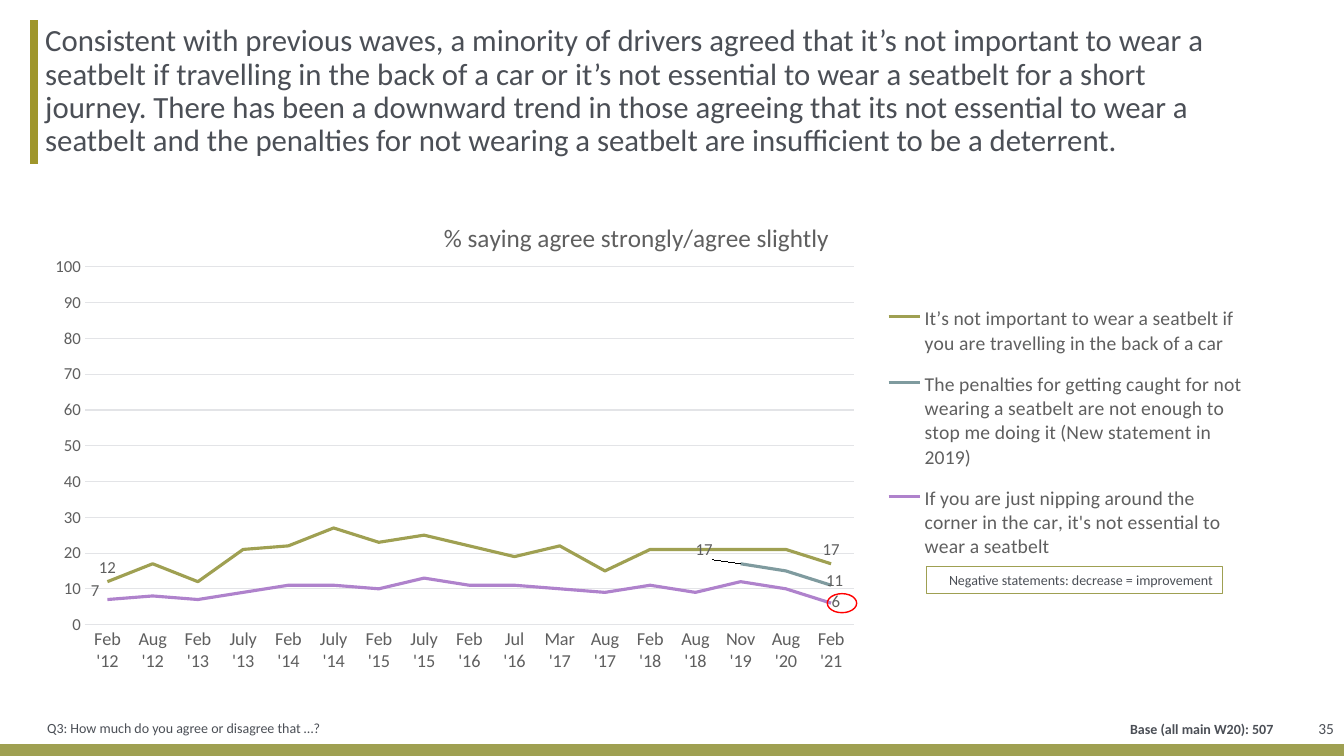
import dataclasses

import pptx
import pptx.chart.data
import pptx.dml.color
import pptx.enum.chart
import pptx.enum.shapes
import pptx.enum.text
import pptx.oxml
import pptx.oxml.ns
import pptx.util

Cm = pptx.util.Cm
Pt = pptx.util.Pt
ALIGN = pptx.enum.text.PP_ALIGN
ANCHOR = pptx.enum.text.MSO_ANCHOR
SHAPE = pptx.enum.shapes.MSO_SHAPE
LABEL = pptx.enum.chart.XL_LABEL_POSITION


@dataclasses.dataclass(frozen=True)
class Theme:
    font: str = "Calibri"
    text: str = "4B4F56"
    chart_text: str = "5F5F5F"
    grid: str = "E3E4E7"
    olive: str = "9FA052"
    accent: str = "9F962B"
    teal: str = "7F9B9F"
    purple: str = "AF82CC"
    alert: str = "FF0000"
    title: int = 22
    chart_title: int = 18
    legend: int = 14
    category: int = 13
    value: int = 12
    number: int = 11
    note: int = 10


THEME = Theme()

WAVES = ["Feb '12", "Aug '12", "Feb '13", "July '13", "Feb '14", "July '14",
         "Feb '15", "July '15", "Feb '16", "Jul '16", "Mar '17", "Aug '17",
         "Feb '18", "Aug '18", "Nov '19", "Aug '20", "Feb '21"]

# Each statement: name, colour, values, labelled points with their offsets
STATEMENTS = [
    ("It’s not important to wear a seatbelt if you are travelling in the back of a car",
     THEME.olive,
     [12, 17, 12, 21, 22, 27, 23, 25, 22, 19, 22, 15, 21, 21, 21, 21, 17],
     {0: None, 16: None}),
    ("The penalties for getting caught for not wearing a seatbelt are not enough "
     "to stop me doing it (New statement in 2019)",
     THEME.teal,
     [None] * 14 + [17, 15, 11],
     {14: (-0.03, 0), 16: (0.003, 0.02)}),
    ("If you are just nipping around the corner in the car, it's not essential "
     "to wear a seatbelt",
     THEME.purple,
     [7, 8, 7, 9, 11, 11, 10, 13, 11, 11, 10, 9, 11, 9, 12, 10, 6],
     {0: (-0.01, 0.01), 16: (0.004, 0.026)}),
]


def rgb(code):
    return pptx.dml.color.RGBColor.from_string(code)


def apply(target, values):
    for name, value in values.items():
        setattr(target, name, value)


def style_font(font, size, color=THEME.chart_text, bold=False):
    apply(font, {"name": THEME.font, "size": Pt(size), "bold": bold})
    font.color.rgb = rgb(color)


def write(shape, text, size, align=ALIGN.LEFT, anchor=ANCHOR.TOP, bold=False, **frame_values):
    frame = shape.text_frame
    apply(frame, {"word_wrap": True, "vertical_anchor": anchor, **frame_values})
    para = frame.paragraphs[0]
    para.alignment = align
    span = para.add_run()
    span.text = text
    style_font(span.font, size, THEME.text, bold)
    return para


def add_note(page, box, text, size, **values):
    shape = page.shapes.add_textbox(*map(Cm, box))
    write(shape, text, size, **values)


def add_outline(page, kind, box, color, width):
    shape = page.shapes.add_shape(kind, *map(Cm, box))
    shape.shadow.inherit = False
    shape.fill.background()
    shape.line.color.rgb = rgb(color)
    shape.line.width = Pt(width)
    return shape


def set_layout(parent, before, values, inner=False):
    """Give a chart part a manual layout, after the child named by before."""
    for old in parent.findall(pptx.oxml.ns.qn("c:layout")):
        parent.remove(old)
    target = '<c:layoutTarget val="inner"/>' if inner else ""
    modes = ""
    if len(values) == 4 or parent.tag.endswith("}title"):
        modes = '<c:xMode val="edge"/><c:yMode val="edge"/>'
    sizes = "".join(f'<c:{name} val="{value}"/>' for name, value in zip("xywh", values))
    layout = pptx.oxml.parse_xml(
        f'<c:layout {pptx.oxml.ns.nsdecls("c")}><c:manualLayout>'
        f'{target}{modes}{sizes}</c:manualLayout></c:layout>')
    if before:
        parent.find(pptx.oxml.ns.qn(before)).addnext(layout)
    else:
        parent.insert(0, layout)


def add_heading(page, box):
    left, top, width, height = box
    title = page.shapes.title
    apply(title, dict(zip(("left", "top", "width", "height"), map(Cm, box))))
    para = write(
        title,
        "Consistent with previous waves, a minority of drivers agreed that it’s not "
        "important to wear a seatbelt if travelling in the back of a car or it’s not "
        "essential to wear a seatbelt for a short journey. There has been a downward "
        "trend in those agreeing that its not essential to wear a seatbelt and the "
        "penalties for not wearing a seatbelt are insufficient to be a deterrent.",
        THEME.title, anchor=ANCHOR.MIDDLE, auto_size=pptx.enum.text.MSO_AUTO_SIZE.NONE,
        margin_left=Cm(0.2), margin_top=0, margin_right=0, margin_bottom=0)
    apply(para, {"line_spacing": 0.9, "space_before": Pt(0)})

    # Accent rule on the left edge
    rule = page.shapes.add_connector(pptx.enum.shapes.MSO_CONNECTOR.STRAIGHT,
                                     Cm(left - 0.08), Cm(top), Cm(left - 0.08), Cm(top + height))
    rule.line.color.rgb = rgb(THEME.accent)
    rule.line.width = Pt(6)
    rule._element.spPr.append(
        pptx.oxml.parse_xml(f'<a:effectLst {pptx.oxml.ns.nsdecls("a")}/>'))


def style_axes(chart):
    tick_none = pptx.enum.chart.XL_TICK_MARK.NONE
    for axis, size in ((chart.category_axis, THEME.category), (chart.value_axis, THEME.value)):
        apply(axis, {"major_tick_mark": tick_none, "minor_tick_mark": tick_none})
        style_font(axis.tick_labels.font, size)
    values = chart.value_axis
    apply(values, {"minimum_scale": 0, "maximum_scale": 100, "major_unit": 10,
                   "has_major_gridlines": True})
    values.format.line.fill.background()
    for line in (values.major_gridlines.format.line, chart.category_axis.format.line):
        line.color.rgb = rgb(THEME.grid)
        line.width = Pt(0.75)


def style_series(series, color, labelled):
    series.smooth = False
    series.marker.style = pptx.enum.chart.XL_MARKER_STYLE.NONE
    series.format.line.color.rgb = rgb(color)
    series.format.line.width = Pt(2.25)
    series.data_labels.show_value = False
    for index, offset in labelled.items():
        label = series.points[index].data_label
        style_font(label.font, THEME.value)
        label.position = LABEL.ABOVE
        if offset:
            set_layout(label._dLbl, "c:idx", offset)


def add_trend_chart(page, box):
    left, top, width, height = box
    data = pptx.chart.data.CategoryChartData()
    data.categories = WAVES
    for name, color, values, labelled in STATEMENTS:
        data.add_series(name, values)
    chart = page.shapes.add_chart(
        pptx.enum.chart.XL_CHART_TYPE.LINE, *map(Cm, box), data).chart
    style_font(chart.font, THEME.note)
    chart.plots[0].vary_by_categories = False
    style_axes(chart)
    for series, (name, color, values, labelled) in zip(chart.plots[0].series, STATEMENTS):
        style_series(series, color, labelled)

    # Title, legend and plot area
    chart.has_title = True
    span = chart.chart_title.text_frame.paragraphs[0].add_run()
    span.text = "% saying agree strongly/agree slightly"
    style_font(span.font, THEME.chart_title)
    chart.has_legend = True
    apply(chart.legend, {"position": pptx.enum.chart.XL_LEGEND_POSITION.RIGHT,
                         "include_in_layout": False})
    style_font(chart.legend.font, THEME.legend)
    set_layout(chart.chart_title._element, "c:tx", (0.33, 0.04))
    set_layout(chart.legend._element, "c:legendPos", (0.71, 0.19, 0.29, 0.58))
    set_layout(chart._chartSpace.chart.plotArea, None, (0.039, 0.144, 0.631, 0.723), inner=True)

    # Reading hint under the legend and ring round the latest value
    hint = add_outline(page, SHAPE.RECTANGLE, (left + 22.4, top + 9.34, 7.47, 0.69),
                       THEME.olive, 0.75)
    write(hint, "Negative statements: decrease = improvement", THEME.note, align=ALIGN.RIGHT)
    add_outline(page, SHAPE.OVAL, (left + 19.91, top + 10.03, 0.74, 0.48), THEME.alert, 1)


def add_footer(page, box):
    left, top, width, height = box
    band = page.shapes.add_shape(SHAPE.RECTANGLE, *map(Cm, box))
    band.shadow.inherit = False
    band.fill.solid()
    band.fill.fore_color.rgb = rgb(THEME.olive)
    band.line.fill.background()
    add_note(page, (left + 0.94, top - 0.74, 20, 0.69),
             "Q3: How much do you agree or disagree that …?", THEME.note, anchor=ANCHOR.MIDDLE)
    add_note(page, (left + 22.33, top - 0.72, 10.01, 0.7),
             "Base (all main W20): 507", THEME.note, align=ALIGN.RIGHT, bold=True)
    add_note(page, (left + 31.54, top - 1.1, 2.33, 1.4),
             "35", THEME.number, align=ALIGN.RIGHT, anchor=ANCHOR.MIDDLE)


def main():
    deck = pptx.Presentation()
    apply(deck, {"slide_width": Cm(33.87), "slide_height": Cm(19.05)})
    page = deck.slides.add_slide(deck.slide_layouts.get_by_name("Title Only"))
    add_footer(page, (0, 18.75, 33.87, 0.3))
    add_heading(page, (0.94, 0.51, 29.59, 3.61))
    add_trend_chart(page, (0.94, 4.93, 30.71, 12.47))
    deck.save("out.pptx")


if __name__ == "__main__":
    main()
